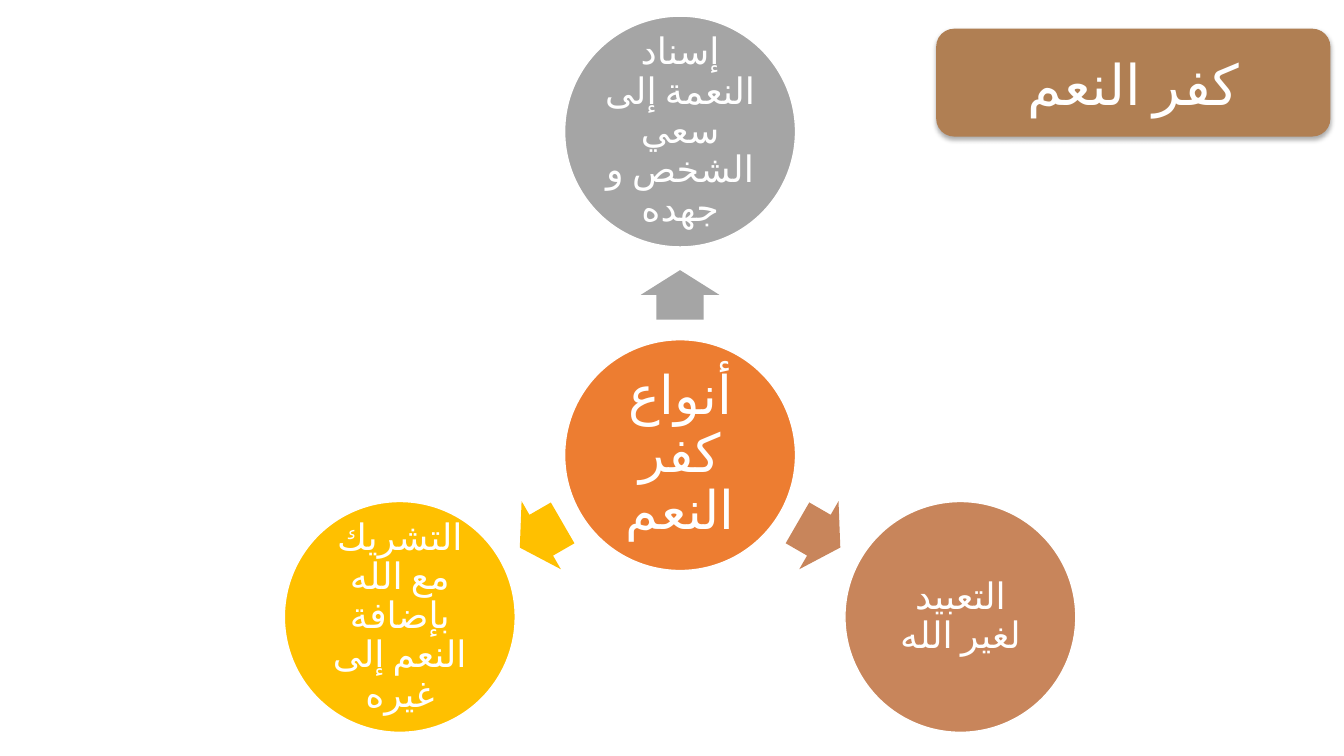
from dataclasses import dataclass
from math import cos, radians, sin

from lxml import etree
from pptx import Presentation
from pptx.dml.color import RGBColor
from pptx.enum import lang, shapes, text
from pptx.oxml import ns
from pptx.util import Inches, Pt

COLORS = {
    "hub": "ED7D31",
    "effort": "A5A5A5",
    "naming": "C8855B",
    "partner": "FFC000",
    "title": "B07F53",
    "white": "FFFFFF",
    "shadow": "000000",
}
FONT = "Calibri"
HUB_X, HUB_Y = 6.745, 4.515
CIRCLE_SIZE = 2.29
CIRCLE_ORBIT = 3.21
ARROW_ORBIT = 1.59
ARROW_W, ARROW_H = 0.49, 0.78


@dataclass
class Kind:
    label: str
    color: str
    angle: int


KINDS = [
    Kind("إسناد النعمة إلى سعي الشخص و جهده", "effort", 270),
    Kind("التعبيد لغير الله", "naming", 30),
    Kind("التشريك مع الله بإضافة النعم إلى غيره", "partner", 150),
]


def rgb(name: str) -> RGBColor:
    return RGBColor.from_string(COLORS[name])


def orbit_point(angle: int, distance: float) -> tuple[float, float]:
    a = radians(angle)
    return HUB_X + distance * cos(a), HUB_Y + distance * sin(a)


def add_filled(s, preset, cx: float, cy: float, w: float, h: float, color: str):
    sp = s.shapes.add_shape(
        preset, Inches(cx - w / 2), Inches(cy - h / 2), Inches(w), Inches(h)
    )
    sp.shadow.inherit = False
    sp.fill.solid()
    sp.fill.fore_color.rgb = rgb(color)
    sp.line.fill.background()
    return sp


def write_label(sp, label: str, size: int, inset: float, spacing: float) -> None:
    tf = sp.text_frame
    frame_format = {
        "word_wrap": True,
        "vertical_anchor": text.MSO_ANCHOR.MIDDLE,
        "margin_left": Inches(inset),
        "margin_right": Inches(inset),
        "margin_top": Inches(inset),
        "margin_bottom": Inches(inset),
    }
    for key, value in frame_format.items():
        setattr(tf, key, value)
    p = tf.paragraphs[0]
    p.alignment = text.PP_ALIGN.CENTER
    p.line_spacing = spacing
    p._p.get_or_add_pPr().set("rtl", "1")
    r = p.add_run()
    r.text = label
    run_format = {
        "size": Pt(size),
        "name": FONT,
        "language_id": lang.MSO_LANGUAGE_ID.ARABIC,
    }
    for key, value in run_format.items():
        setattr(r.font, key, value)
    r.font.color.rgb = rgb("white")
    r_pr = r._r.get_or_add_rPr()
    r_pr.set("lang", "ar-SA")
    etree.SubElement(r_pr, ns.qn("a:cs"), typeface=FONT)


def add_circle(s, cx: float, cy: float, color: str, label: str, size: int, inset: float) -> None:
    sp = add_filled(s, shapes.MSO_SHAPE.OVAL, cx, cy, CIRCLE_SIZE, CIRCLE_SIZE, color)
    sp.line.color.rgb = rgb("white")
    sp.line.width = Pt(1)
    write_label(sp, label, size, inset, 0.9)


def add_arrow(s, kind: Kind) -> None:
    cx, cy = orbit_point(kind.angle, ARROW_ORBIT)
    sp = add_filled(s, shapes.MSO_SHAPE.RIGHT_ARROW, cx, cy, ARROW_W, ARROW_H, kind.color)
    sp.rotation = kind.angle
    sp.adjustments[0] = 0.6
    sp.adjustments[1] = 0.5


def add_title(s, label: str) -> None:
    sp = add_filled(s, shapes.MSO_SHAPE.ROUNDED_RECTANGLE, 11.24, 0.82, 3.91, 1.07, "title")
    write_label(sp, label, 40, 0.05, 1.0)
    effects = sp._element.spPr.find(ns.qn("a:effectLst"))
    shadow = etree.SubElement(
        effects,
        ns.qn("a:outerShdw"),
        blurRad=str(Pt(3.5)),
        dist=str(Pt(2.2)),
        dir="5400000",
        rotWithShape="0",
    )
    tone = etree.SubElement(shadow, ns.qn("a:srgbClr"), val=COLORS["shadow"])
    etree.SubElement(tone, ns.qn("a:alpha"), val="32000")


def main() -> None:
    prs = Presentation()
    prs.slide_width, prs.slide_height = Inches(13.33), Inches(7.5)
    s = prs.slides.add_slide(prs.slide_layouts[6])
    add_circle(s, HUB_X, HUB_Y, "hub", "أنواع كفر النعم", 38, 0.05)
    for kind in KINDS:
        add_arrow(s, kind)
        cx, cy = orbit_point(kind.angle, CIRCLE_ORBIT)
        add_circle(s, cx, cy, kind.color, kind.label, 26, 0.04)
    add_title(s, "كفر النعم")
    prs.save("out.pptx")


if __name__ == "__main__":
    main()
